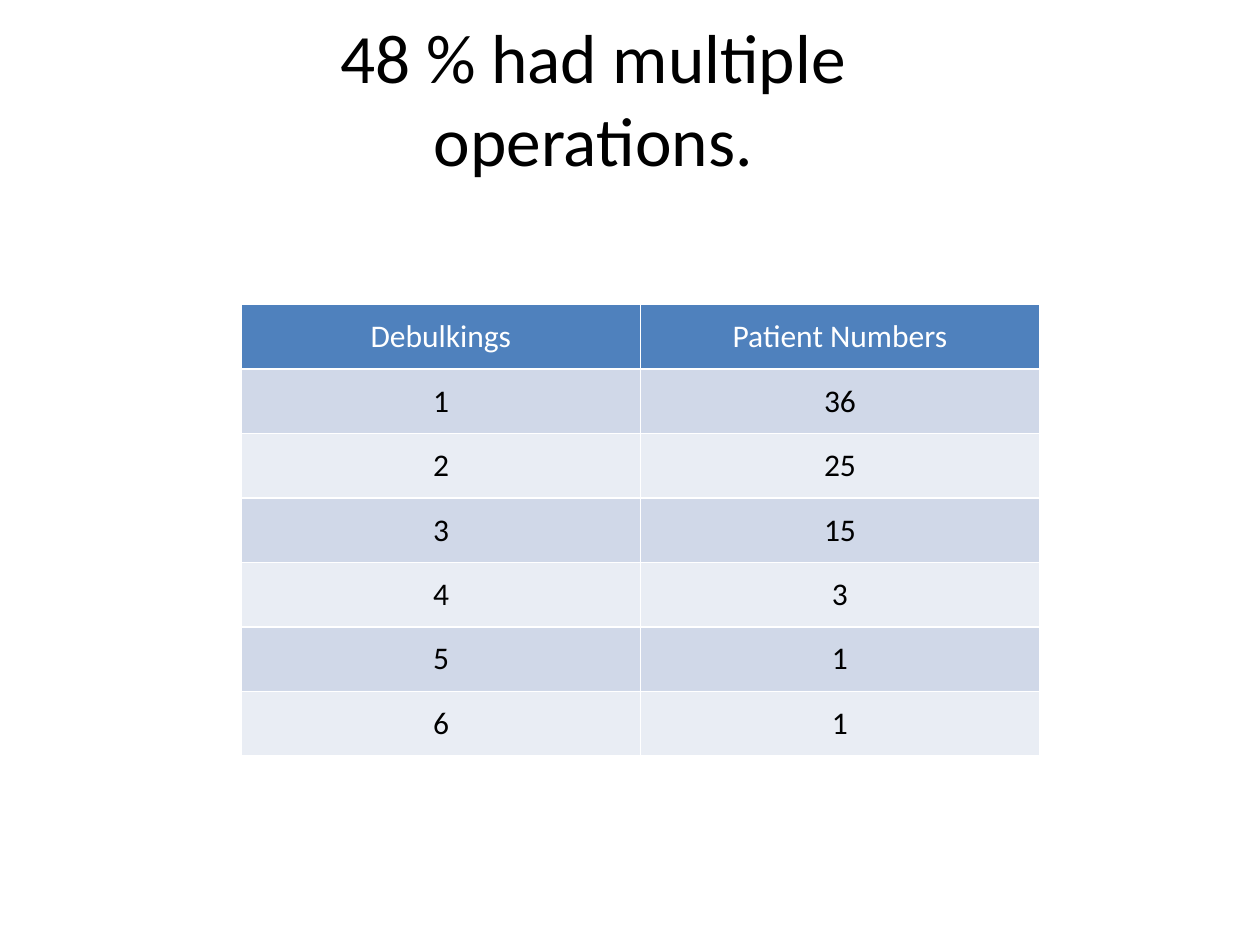
from pptx import Presentation
from pptx.dml.color import RGBColor
from pptx.enum.text import MSO_ANCHOR, MSO_AUTO_SIZE, PP_ALIGN
from pptx.util import Pt

TITLE = "48 % had multiple operations."
ROWS = [
    ("Debulkings", "Patient Numbers"),
    ("1", "36"),
    ("2", "25"),
    ("3", "15"),
    ("4", "3"),
    ("5", "1"),
    ("6", "1"),
]

FONT = "Calibri"
BLACK = RGBColor(0x00, 0x00, 0x00)
WHITE = RGBColor(0xFF, 0xFF, 0xFF)
BLUE = RGBColor(0x4F, 0x81, 0xBD)
BANDS = (RGBColor(0xE9, 0xED, 0xF4), RGBColor(0xD0, 0xD8, 0xE8))
CENTER = PP_ALIGN.CENTER
MIDDLE = MSO_ANCHOR.MIDDLE
NO_AUTOFIT = MSO_AUTO_SIZE.NONE

TABLE_LEFT, TABLE_TOP, TABLE_WIDTH, TABLE_HEIGHT = 138, 174, 456, 258


def write(tf, text, size, color):
    p = tf.paragraphs[0]
    p.alignment = CENTER
    r = p.add_run()
    r.text = text
    r.font.name = FONT
    r.font.size = Pt(size)
    r.font.bold = False
    r.font.color.rgb = color


def add_title(s):
    sp = s.shapes.title
    sp.left, sp.top, sp.width, sp.height = Pt(150), Pt(30), Pt(378), Pt(51)
    tf = sp.text_frame
    tf.word_wrap = True
    tf.auto_size = NO_AUTOFIT
    tf.vertical_anchor = MIDDLE
    write(tf, TITLE, 39.6, BLACK)


def add_results(s):
    table = s.shapes.add_table(
        len(ROWS), len(ROWS[0]),
        Pt(TABLE_LEFT), Pt(TABLE_TOP), Pt(TABLE_WIDTH), Pt(TABLE_HEIGHT),
    ).table
    for i, row in enumerate(ROWS):
        table.rows[i].height = Pt(TABLE_HEIGHT / len(ROWS))
        for j, text in enumerate(row):
            cell = table.cell(i, j)
            cell.vertical_anchor = MIDDLE
            cell.fill.solid()
            cell.fill.fore_color.rgb = BANDS[i % 2] if i else BLUE
            write(cell.text_frame, text, 18, BLACK if i else WHITE)


def main():
    prs = Presentation()
    prs.slide_width, prs.slide_height = Pt(720), Pt(540)
    s = prs.slides.add_slide(prs.slide_layouts[5])
    add_title(s)
    add_results(s)
    prs.save("out.pptx")


if __name__ == "__main__":
    main()
